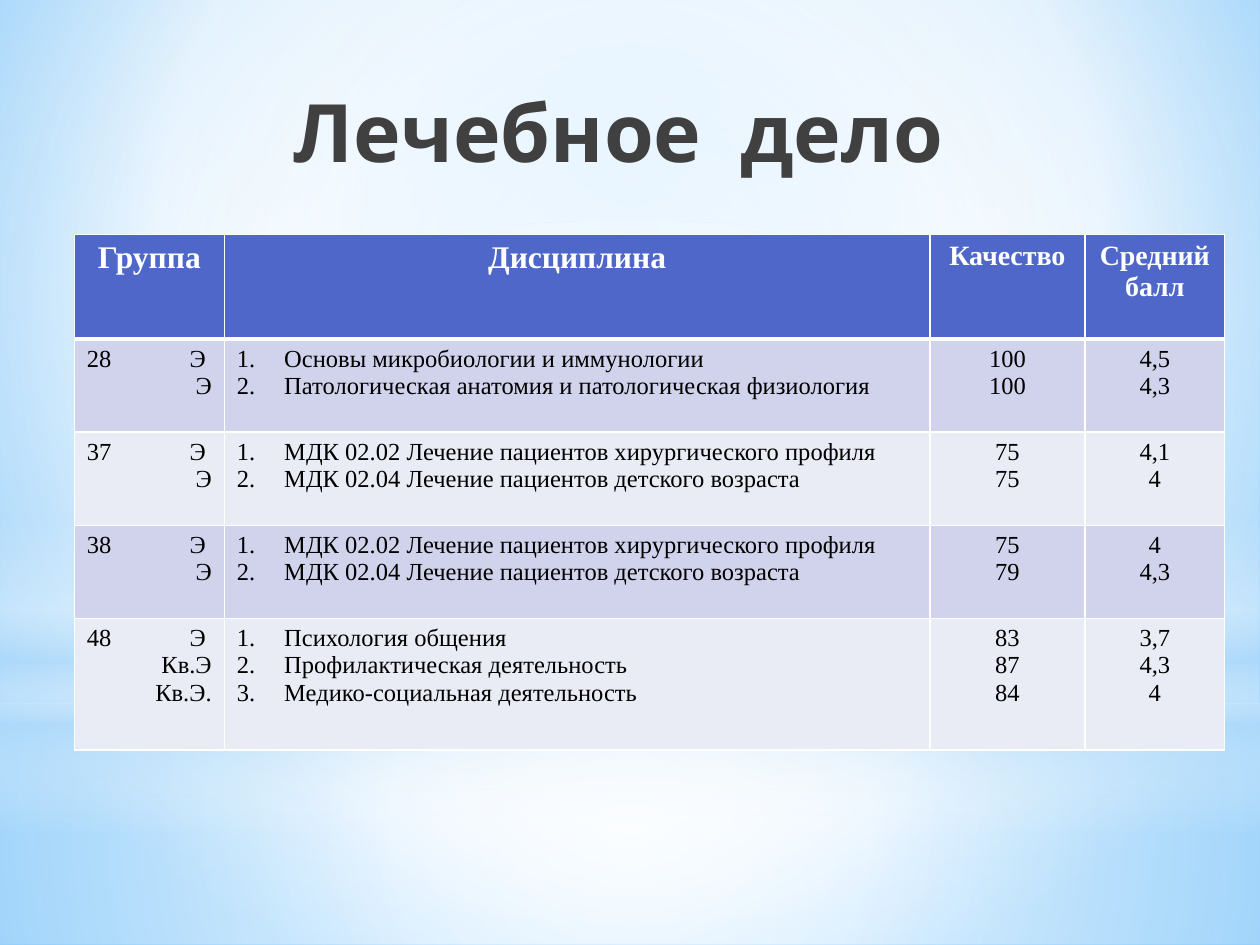
from lxml import etree
from pptx import Presentation
from pptx.dml.color import RGBColor
from pptx.enum import shapes, text
from pptx.oxml import ns
from pptx.util import Pt

COLORS = {"white": "FFFFFF", "haze": "B4DCFA", "sky": "9ED5FF", "deep sky": "5BB9FF",
          "title": "404040", "header": "4E67C8", "odd row": "D0D3EB",
          "even row": "E9EBF5", "body": "000000"}
TITLE_FONT, TABLE_FONT = "Cabin", "Times New Roman"

TITLE_WORDS = ["Лечебное", "дело"]
HEADERS = [("Группа", 18), ("Дисциплина", 18), ("Качество", 16), ("Средний\nбалл", 16)]
# Group, then its exams: (kind, discipline, quality, average mark)
GROUPS = [
    ("28", [("Э", "Основы микробиологии и иммунологии", "100", "4,5"),
            ("Э", "Патологическая анатомия и патологическая физиология", "100", "4,3")]),
    ("37", [("Э", "МДК 02.02 Лечение пациентов хирургического профиля", "75", "4,1"),
            ("Э", "МДК 02.04 Лечение пациентов детского возраста", "75", "4")]),
    ("38", [("Э", "МДК 02.02 Лечение пациентов хирургического профиля", "75", "4"),
            ("Э", "МДК 02.04 Лечение пациентов детского возраста", "79", "4,3")]),
    ("48", [("Э", "Психология общения", "83", "3,7"),
            ("Кв.Э", "Профилактическая деятельность", "87", "4,3"),
            ("Кв.Э.", "Медико-социальная деятельность", "84", "4")]),
]
COLUMN_WIDTHS = [85.7, 403.2, 88.6, 79.9]
ROW_HEIGHTS = [59.8, 53.3, 53.3, 53.3, 75.1]

# Gradient stops: (position %, colour, opacity %)
CENTRE = (50, 50, 50, 50)
BACKDROP_STOPS = [(0, "sky", 100), (60, "white", 100), (100, "deep sky", 100)]
LAYERS = [  # shape, top, height, stops, focus (None for a vertical gradient)
    ("RECTANGLE", 401.8, 138.2,
     [(0, "white", 91), (37, "white", 76), (100, "haze", 79)], CENTRE),
    ("RECTANGLE", 0, 401.8,
     [(0, "white", 89), (48, "white", 62), (100, "haze", 79)], CENTRE),
    ("RECTANGLE", 296.6, 180,
     [(0, "white", 0), (29, "white", 30), (45, "haze", 40), (55, "white", 26),
      (65, "haze", 60), (100, "white", 0)], None),
    ("OVAL", 126, 401.8, [(0, "white", 100), (56, "white", 0)], CENTRE),
]


def rgb(name):
    return RGBColor.from_string(COLORS[name])


def add_xml(parent, tag, **attributes):
    element = etree.SubElement(parent, ns.qn(tag))
    for name, value in attributes.items():
        element.set(name, str(value))
    return element


def set_gradient(fill, owner, stops, focus):
    """Replace the owner's fill with a gradient that keeps each stop's opacity."""
    fill.solid()
    solid = owner.find(ns.qn("a:solidFill"))
    gradient = etree.Element(ns.qn("a:gradFill"), rotWithShape="1")
    stop_list = add_xml(gradient, "a:gsLst")
    for position, color, opacity in stops:
        stop = add_xml(stop_list, "a:gs", pos=position * 1000)
        value = add_xml(stop, "a:srgbClr", val=COLORS[color])
        add_xml(value, "a:alpha", val=opacity * 1000)
    if focus:
        rings = add_xml(gradient, "a:path", path="circle")
        edges = {side: part * 1000 for side, part in zip("ltrb", focus)}
        add_xml(rings, "a:fillToRect", **edges)
    else:
        add_xml(gradient, "a:lin", ang=90 * 60000, scaled=0)
    owner.replace(solid, gradient)


def add_backdrop(page, width):
    fill = page.background.fill
    fill.solid()
    owner = page.element.find(".//" + ns.qn("p:bgPr"))
    set_gradient(fill, owner, BACKDROP_STOPS, (20, 10, 20, 60))
    for kind, top, height, stops, focus in LAYERS:
        layer = page.shapes.add_shape(shapes.MSO_SHAPE[kind], 0, Pt(top), width, Pt(height))
        layer.shadow.inherit = False
        layer.line.fill.background()
        set_gradient(layer.fill, layer.element.spPr, stops, focus)


def format_title(title):
    title.element.getparent().append(title.element)  # in front of the backdrop
    title.left, title.top, title.width, title.height = Pt(70.6), Pt(43.2), Pt(565.2), Pt(96.5)
    frame = title.text_frame
    frame.word_wrap = True
    frame.auto_size = text.MSO_AUTO_SIZE.NONE
    frame.vertical_anchor = text.MSO_ANCHOR.TOP
    para = frame.paragraphs[0]
    para.alignment = text.PP_ALIGN.CENTER
    for words in (TITLE_WORDS[0], " ", TITLE_WORDS[1]):
        span = para.add_run()
        span.text = words
        style_font(span.font, TITLE_FONT, 46, "title", True)
        if words == " ":
            span.font._element.set("spc", "1200")  # wider gap between the words


def style_font(font, name, size, color, bold):
    font.name, font.size, font.bold = name, Pt(size), bold
    font.color.rgb = rgb(color)


def fill_cell(cell, lines, size, color, fill, bold=False, align="CENTER"):
    cell.text_frame.text = "\n".join(lines)
    for para in cell.text_frame.paragraphs:
        para.alignment = text.PP_ALIGN[align]
        for span in para.runs:
            style_font(span.font, TABLE_FONT, size, color, bold)
    cell.fill.solid()
    cell.fill.fore_color.rgb = rgb(fill)


def set_borders(cell, bottom=1, top=1):
    properties = cell._tc.get_or_add_tcPr()
    sides = [("a:lnL", 1), ("a:lnR", 1), ("a:lnT", top), ("a:lnB", bottom)]
    for index, (tag, width) in enumerate(sides):
        line = add_xml(properties, tag, w=Pt(width))
        add_xml(add_xml(line, "a:solidFill"), "a:srgbClr", val=COLORS["white"])
        properties.insert(index, line)


def number_lines(cell):
    for para in cell.text_frame.paragraphs:
        properties = para._p.get_or_add_pPr()
        properties.set("marL", str(Pt(27)))
        properties.set("indent", str(-Pt(27)))
        add_xml(properties, "a:buAutoNum", type="arabicPeriod")


def align_group(cell):
    """Put the group number left and its first exam kind at a right tab stop."""
    first = cell.text_frame.paragraphs[0]
    first.alignment = text.PP_ALIGN.LEFT
    tabs = add_xml(first._p.get_or_add_pPr(), "a:tabLst")
    add_xml(tabs, "a:tab", pos=Pt(68), algn="r")


def add_results(page):
    table = page.shapes.add_table(len(ROW_HEIGHTS), len(COLUMN_WIDTHS), Pt(42.5), Pt(133.9),
                                  Pt(sum(COLUMN_WIDTHS)), Pt(sum(ROW_HEIGHTS))).table
    for column, width in zip(table.columns, COLUMN_WIDTHS):
        column.width = Pt(width)
    for row, height in zip(table.rows, ROW_HEIGHTS):
        row.height = Pt(height)

    for cell, (label, size) in zip(table.rows[0].cells, HEADERS):
        fill_cell(cell, [label], size, "white", "header", bold=True)
        set_borders(cell, bottom=3)

    for index, (group, exams) in enumerate(GROUPS, start=1):
        fill = "odd row" if index % 2 else "even row"
        kinds, disciplines, qualities, marks = zip(*exams)
        columns = [([f"{group}\t{kinds[0]}", *kinds[1:]], "RIGHT"), (disciplines, "LEFT"),
                   (qualities, "CENTER"), (marks, "CENTER")]
        cells = list(table.rows[index].cells)
        for cell, (lines, align) in zip(cells, columns):
            fill_cell(cell, lines, 14, "body", fill, align=align)
            set_borders(cell, top=3 if index == 1 else 1)
        align_group(cells[0])
        number_lines(cells[1])


def main():
    deck = Presentation()
    deck.slide_width, deck.slide_height = Pt(720), Pt(540)
    page = deck.slides.add_slide(deck.slide_layouts[5])
    add_backdrop(page, deck.slide_width)
    format_title(page.shapes.title)
    add_results(page)
    deck.save("out.pptx")


if __name__ == "__main__":
    main()
